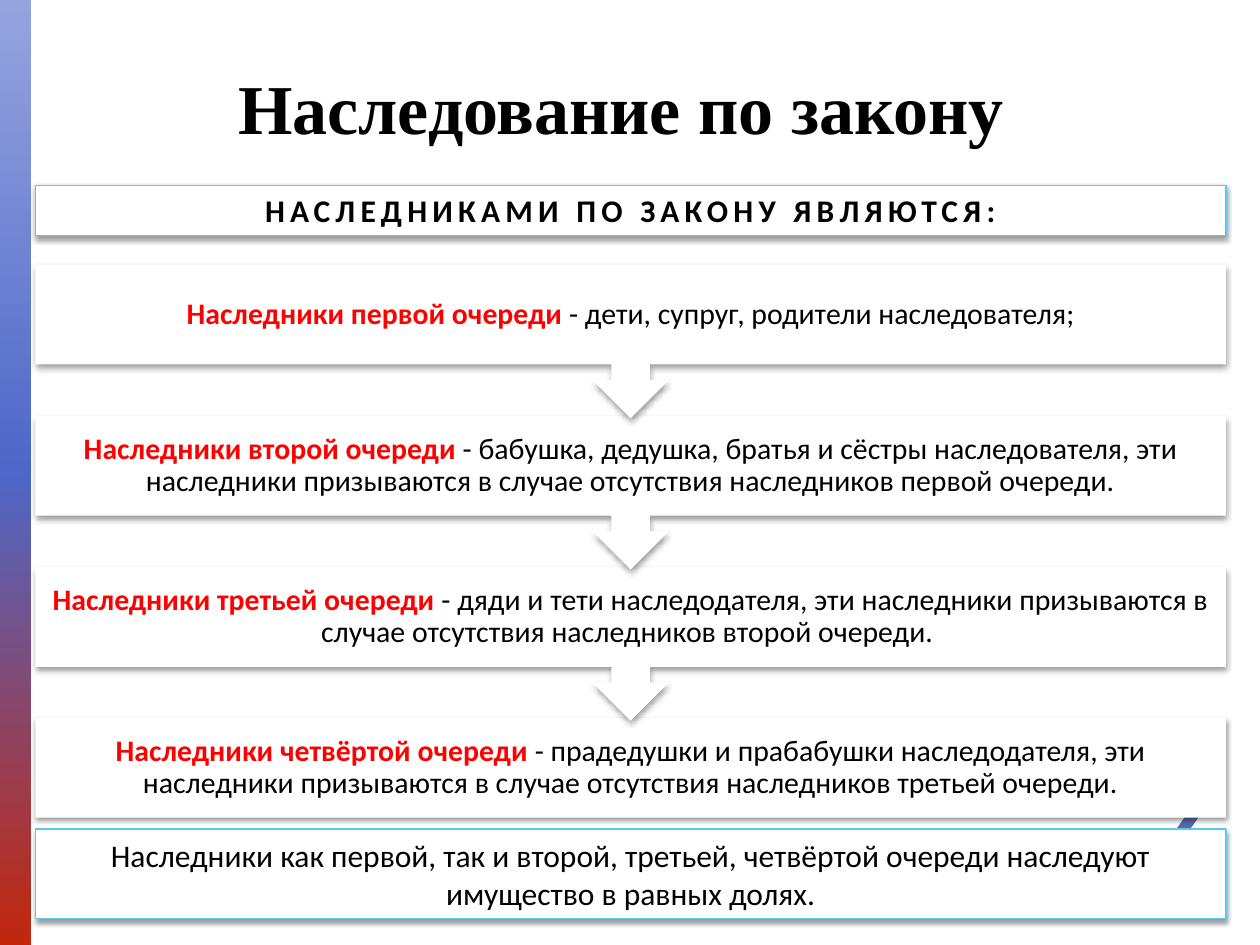
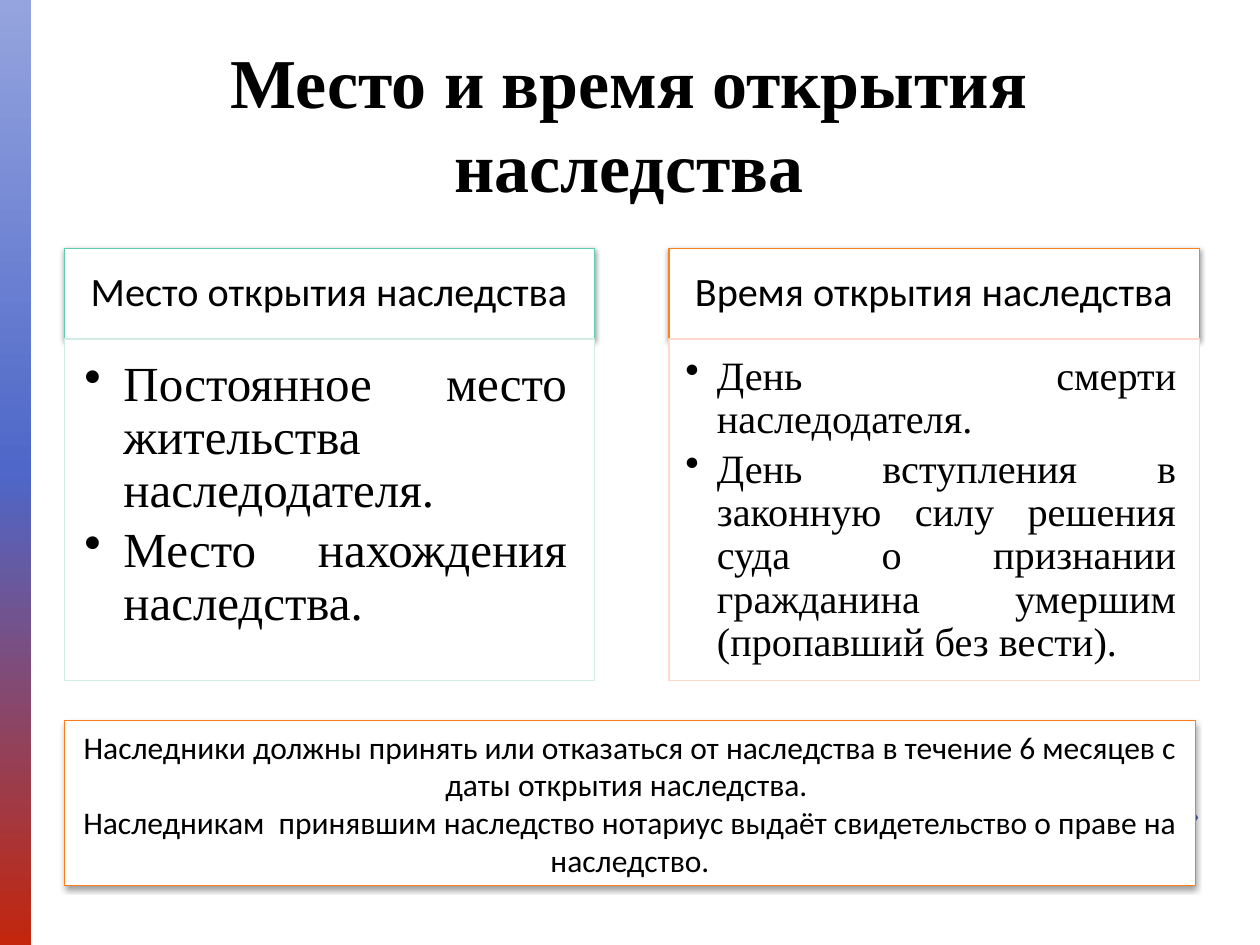
from copy import deepcopy

from lxml.etree import SubElement
from pptx import Presentation
from pptx.dml.color import RGBColor
from pptx.enum.shapes import MSO_SHAPE as Shape
from pptx.enum.text import MSO_ANCHOR as Anchor, MSO_AUTO_SIZE as AutoSize, PP_ALIGN as Align
from pptx.oxml.ns import qn
from pptx.util import Inches, Pt

COLORS = {
    "white": "FFFFFF", "black": "000000", "red": "FF0000", "chevron": "5968B0",
    "band_top": "95A4DE", "band_middle": "4E67C8", "band_bottom": "C3260C",
    "blue": "58C9F1", "green": "5DCEAF", "pale_green": "D2EDE3",
    "orange": "FF8021", "pale_orange": "FFD8CC", "note_orange": "FF7C1B",
}
SANS, SERIF = "Calibri", "Times New Roman"

HEIRS = [
    ("Наследники первой очереди ", "- дети, супруг, родители наследователя;"),
    ("Наследники второй очереди ", "- бабушка, дедушка, братья и сёстры наследователя, эти "
     "наследники призываются в случае отсутствия наследников первой очереди."),
    ("Наследники третьей очереди ", "- дяди и тети наследодателя, эти наследники призываются "
     "в случае отсутствия наследников второй очереди. "),
    ("Наследники четвёртой очереди ", "- прадедушки и прабабушки наследодателя, эти "
     "наследники призываются в случае отсутствия наследников третьей очереди."),
]
COLUMNS = [
    dict(heading="Место открытия наследства", line="green", body_line="pale_green",
         size=28, indent=0.31, insets=(0.16, 0.16, 0.22, 0.24),
         items=["Постоянное место жительства наследодателя.", "Место нахождения наследства."]),
    dict(heading="Время открытия наследства", line="orange", body_line="pale_orange",
         size=23, indent=0.25, insets=(0.13, 0.13, 0.18, 0.2),
         items=["День смерти наследодателя.",
                "День вступления в законную силу решения суда о признании гражданина "
                "умершим (пропавший без вести)."]),
]


def rgb(name):
    return RGBColor.from_string(COLORS[name])


def add_run(p, text, size, font, color="black", bold=False, spacing=0):
    r = p.add_run()
    r.text = text
    r.font.size, r.font.name, r.font.bold = Pt(size), font, bold
    r.font.color.rgb = rgb(color)
    if spacing:
        r.font._element.set("spc", str(spacing * 100))


def add_bullet(p, indent):
    pPr = p._p.get_or_add_pPr()
    pPr.set("marL", str(Inches(indent)))
    pPr.set("indent", str(-Inches(indent)))
    SubElement(pPr, qn("a:buChar")).set("char", "•")


def write(tf, paragraphs, size=18, font=SANS, bold=False, spacing=0, lead_color="red",
          align=Align.CENTER, anchor=Anchor.MIDDLE, insets=(0.1, 0.05, 0.1, 0.05),
          line_spacing=1.0, space_after=0, indent=0):
    tf.word_wrap, tf.auto_size, tf.vertical_anchor = True, AutoSize.NONE, anchor
    tf.margin_left, tf.margin_top, tf.margin_right, tf.margin_bottom = map(Inches, insets)
    for i, content in enumerate(paragraphs):
        p = tf.add_paragraph() if i else tf.paragraphs[0]
        p.alignment, p.line_spacing, p.space_after = align, line_spacing, Pt(space_after)
        if indent:
            add_bullet(p, indent)
        if isinstance(content, tuple):
            lead, content = content
            add_run(p, lead, size, font, lead_color, True)
        add_run(p, content, size, font, bold=bold, spacing=spacing)


def add_shadow(sp):
    effects = sp.element.spPr.find(qn("a:effectLst"))
    shadow = SubElement(effects, qn("a:outerShdw"), blurRad=str(Pt(3.1)), dist=str(Pt(1.6)),
                        dir="5400000", algn="ctr", rotWithShape="0")
    color = SubElement(shadow, qn("a:srgbClr"), val=COLORS["black"])
    SubElement(color, qn("a:alpha"), val="38000")


def add_box(slide, x, y, w, h, line=None, kind=Shape.RECTANGLE, shadow=True):
    sp = slide.shapes.add_shape(kind, *map(Inches, (x, y, w, h)))
    sp.shadow.inherit = False
    sp.fill.solid()
    sp.fill.fore_color.rgb = rgb("white")
    if line:
        sp.line.color.rgb, sp.line.width = rgb(line), Pt(0.75)
    else:
        sp.line.fill.background()
    if shadow:
        add_shadow(sp)
    return sp


def add_band(slide):
    sp = add_box(slide, 0, 0, 0.25, 7.5, shadow=False)
    sp.fill.gradient()
    sp.fill.gradient_angle = 270
    stops = sp.element.spPr.find(".//" + qn("a:gsLst"))
    stops.append(deepcopy(stops[-1]))
    names = ("band_top", "band_middle", "band_bottom")
    for i, (stop, name) in enumerate(zip(sp.fill.gradient_stops, names)):
        stop.position, stop.color.rgb = i / 2, rgb(name)
    return sp


def add_chevron(slide):
    points = [(9.35, 6.25), (9.24, 6.25), (9.4, 6.49), (9.24, 6.72), (9.35, 6.72), (9.51, 6.49)]
    (x, y), *rest = [(Inches(a), Inches(b)) for a, b in points]
    builder = slide.shapes.build_freeform(x, y)
    builder.add_line_segments(rest, close=True)
    sp = builder.convert_to_shape()
    sp.shadow.inherit = False
    sp.fill.solid()
    sp.fill.fore_color.rgb = rgb("chevron")
    sp.line.fill.background()
    return sp


def decorate_layout(slide):
    for i, sp in enumerate((add_band(slide), add_chevron(slide))):
        sp.element.find(".//" + qn("p:cNvPr")).set("id", str(100 + i))
        slide.slide_layout.shapes.element.append(sp.element)


def add_slide(prs, title, x, y, w, h):
    slide = prs.slides.add_slide(prs.slide_layouts[5])
    sp = slide.shapes.title
    sp.left, sp.top, sp.width, sp.height = map(Inches, (x, y, w, h))
    write(sp.text_frame, [title], size=40, font=SERIF, bold=True, anchor=Anchor.BOTTOM)
    return slide


def add_heir_chain(slide, x, w, top=2.1, pitch=1.2):
    last = len(HEIRS) - 1
    for i in range(last, -1, -1):
        kind, h = (Shape.RECTANGLE, 0.79) if i == last else (Shape.DOWN_ARROW_CALLOUT, 1.22)
        sp = add_box(slide, x, top + i * pitch, w, h, kind=kind)
        write(sp.text_frame, [HEIRS[i]], size=17, insets=(0.13,) * 4, line_spacing=0.9)


def add_column(slide, x, heading, line, body_line, size, indent, insets, items, w=4.21):
    head = add_box(slide, x, 1.97, w, 0.72, line)
    write(head.text_frame, [heading], size=23, insets=(0.18, 0.1, 0.18, 0.1), line_spacing=0.9)
    body = add_box(slide, x, 2.69, w, 2.71, body_line, shadow=False)
    write(body.text_frame, items, size=size, font=SERIF, align=Align.JUSTIFY,
          anchor=Anchor.TOP, insets=insets, line_spacing=0.9, space_after=size * 0.15,
          indent=indent)


def add_law_slide(prs):
    slide = add_slide(prs, "Наследование по закону", 0.43, 0.21, 9, 1.02)
    decorate_layout(slide)
    x, w = 0.28, 9.45
    add_heir_chain(slide, x, w)
    banner = add_box(slide, x, 1.47, w, 0.4, "blue")
    write(banner.text_frame, ["НАСЛЕДНИКАМИ ПО ЗАКОНУ ЯВЛЯЮТСЯ:"], bold=True, spacing=3)
    note = add_box(slide, x, 6.58, w, 0.71, "blue")
    write(note.text_frame, ["Наследники как первой, так и второй, третьей, четвёртой очереди "
                            "наследуют имущество в равных долях."])


def add_opening_slide(prs):
    slide = add_slide(prs, "Место и время открытия наследства", 0.49, 0.52, 9, 1.17)
    for i, column in enumerate(COLUMNS):
        add_column(slide, 0.51 + i * 4.8, **column)
    note = add_box(slide, 0.51, 5.72, 8.98, 1.31, "note_orange")
    write(note.text_frame, [
        "Наследники должны принять или отказаться от наследства в течение 6 месяцев с даты "
        "открытия наследства. ",
        "Наследникам  принявшим наследство нотариус выдаёт свидетельство о праве на наследство."])


def main():
    prs = Presentation()
    prs.slide_width, prs.slide_height = Inches(10), Inches(7.5)
    add_law_slide(prs)
    add_opening_slide(prs)
    prs.save("out.pptx")


if __name__ == "__main__":
    main()
